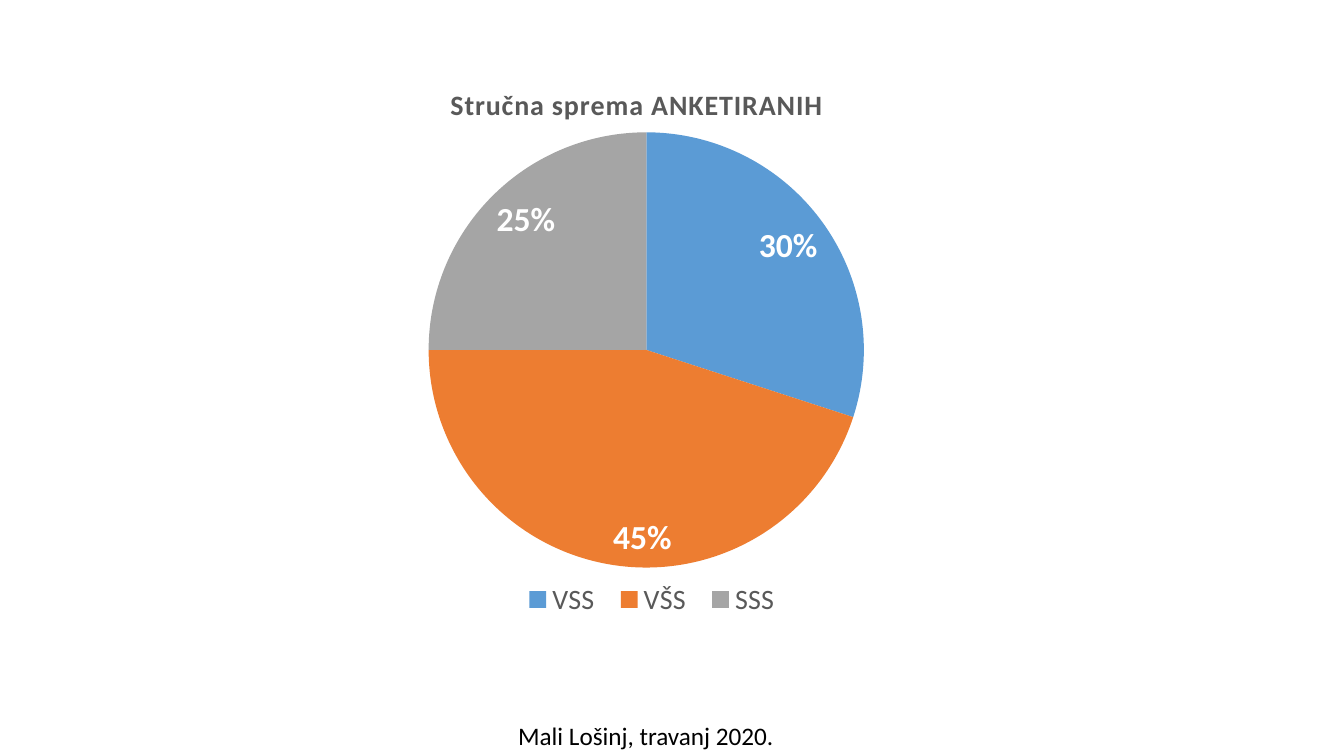
from dataclasses import dataclass

from pptx import Presentation
from pptx.chart.data import CategoryChartData
from pptx.dml.color import RGBColor
from pptx.enum.chart import XL_CHART_TYPE, XL_LABEL_POSITION, XL_LEGEND_POSITION
from pptx.enum.text import MSO_AUTO_SIZE
from pptx.oxml import parse_xml
from pptx.oxml.ns import nsdecls
from pptx.util import Pt


@dataclass(frozen=True)
class Theme:
    face: str = "Calibri"
    ink: str = "000000"
    muted: str = "595959"
    label: str = "FFFFFF"
    slices: tuple = ("5B9BD5", "ED7D31", "A5A5A5")
    base_size: int = 10
    caption_size: int = 18
    heading_size: int = 20
    label_size: int = 24


theme = Theme()
PX = 9525


def style(font, size, color, bold=False):
    font.name = theme.face
    font.size = Pt(size)
    font.bold = bold
    font.color.rgb = RGBColor.from_string(color)


def manual_layout(target, inner=False, **fractions):
    modes = '<c:layoutTarget val="inner"/>' if inner else ""
    modes += '<c:xMode val="edge"/><c:yMode val="edge"/>'
    sizes = "".join(f'<c:{key} val="{value}"/>' for key, value in fractions.items())
    layout = parse_xml(
        f'<c:layout {nsdecls("c")}><c:manualLayout>{modes}{sizes}</c:manualLayout></c:layout>'
    )
    for previous in target.findall(layout.tag):
        target.remove(previous)
    return layout


presentation = Presentation()
presentation.slide_width = 1280 * PX
presentation.slide_height = 720 * PX
slide = presentation.slides.add_slide(presentation.slide_layouts[6])

education = CategoryChartData()
education.categories = ["VSS", "VŠS", "SSS"]
education.add_series("Series 1", (30, 45, 25))
chart = slide.shapes.add_chart(
    XL_CHART_TYPE.PIE, 84 * PX, 60 * PX, 1063 * PX, 537 * PX, education
).chart
style(chart.font, theme.base_size, theme.ink)

chart.has_title = True
heading = chart.chart_title.text_frame.paragraphs[0]
heading.text = "Stručna sprema ANKETIRANIH"
style(heading.font, theme.heading_size, theme.muted, bold=True)
heading.font._element.set("spc", "50")
chart.chart_title.include_in_layout = False
title_element = chart.chart_title._element
title_layout = manual_layout(title_element, x=0.32, y=0.03)
title_element.tx_rich.getparent().addnext(title_layout)

chart.has_legend = True
legend = chart.legend
legend.position = XL_LEGEND_POSITION.TOP
legend.include_in_layout = False
style(legend.font, theme.heading_size, theme.muted)
legend_layout = manual_layout(legend._element, x=0.38, y=0.92, w=0.25, h=0.07)
legend._element.legendPos.addnext(legend_layout)

plot_area = chart._chartSpace.chart.plotArea
plot_area.insert(0, manual_layout(plot_area, inner=True, x=0.305, y=0.123, w=0.39, h=0.772))

pie = chart.plots[0]
pie.vary_by_categories = True
for index, color in enumerate(theme.slices):
    fill = pie.series[0].points[index].format.fill
    fill.solid()
    fill.fore_color.rgb = RGBColor.from_string(color)

pie.has_data_labels = True
shares = pie.data_labels
shares.show_percentage = True
shares.show_value = False
shares.number_format = "0%"
shares.number_format_is_linked = False
shares.position = XL_LABEL_POSITION.INSIDE_END
style(shares.font, theme.label_size, theme.label, bold=True)

caption = slide.shapes.add_textbox(484 * PX, 681 * PX, 265 * PX, 38 * PX).text_frame
caption.word_wrap = False
caption.auto_size = MSO_AUTO_SIZE.SHAPE_TO_FIT_TEXT
place_and_date = caption.paragraphs[0]
place_and_date.text = "Mali Lošinj, travanj 2020."
style(place_and_date.font, theme.caption_size, theme.ink)

presentation.save("out.pptx")
